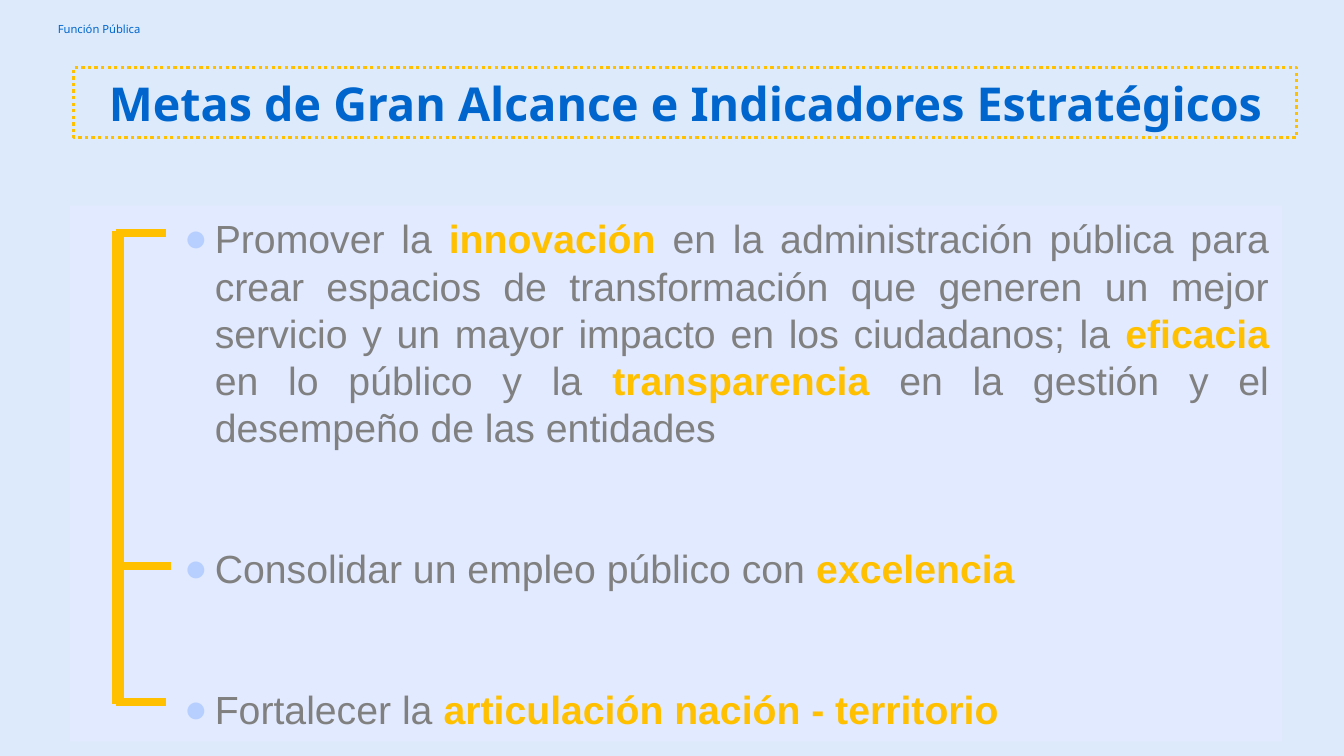
"""Builds the slide on strategic goals and indicators."""
from lxml.etree import SubElement
from pptx import Presentation
from pptx.dml.color import RGBColor
from pptx.enum.dml import MSO_LINE
from pptx.enum.shapes import MSO_CONNECTOR, MSO_SHAPE
from pptx.enum.text import MSO_ANCHOR, MSO_AUTO_SIZE, PP_ALIGN
from pptx.oxml.ns import qn
from pptx.util import Pt

BACKGROUND = RGBColor(0xDC, 0xEA, 0xFB)
PANEL = RGBColor(0xE2, 0xEA, 0xFF)
BLUE = RGBColor(0x00, 0x66, 0xCD)
GOLD = RGBColor(0xFF, 0xC0, 0x00)
GREY = RGBColor(0x80, 0x80, 0x80)
BULLET = RGBColor(0xB7, 0xCF, 0xFF)

GOALS = [
    [("Promover la ", False), ("innovación ", True),
     ("en la administración pública para crear espacios de transformación que "
      "generen un mejor servicio y un mayor impacto en los ciudadanos; la ", False),
     ("eficacia ", True), ("en lo público y la ", False), ("transparencia", True),
     (" en la gestión y el desempeño de las entidades", False)],
    [("Consolidar un empleo público con ", False), ("excelencia", True)],
    [("Fortalecer la ", False), ("articulación nación - territorio", True)],
]


def add_text(paragraph, text, *, size, font, color, bold=False):
    run = paragraph.add_run()
    run.text = text
    run.font.size = Pt(size)
    run.font.name = font
    run.font.color.rgb = color
    run.font.bold = bold


class SlideBuilder:
    heading_font = "Noto Sans"
    body_font = "Arial"
    body_size = 21
    line_height = 25.2

    def __init__(self, presentation):
        self.slide = presentation.slides.add_slide(presentation.slide_layouts[5])
        fill = self.slide.background.fill
        fill.solid()
        fill.fore_color.rgb = BACKGROUND

    def prepare_frame(self, shape, margins=(7.2, 3.6)):
        frame = shape.text_frame
        frame.word_wrap = True
        frame.auto_size = MSO_AUTO_SIZE.NONE
        frame.vertical_anchor = MSO_ANCHOR.MIDDLE
        frame.margin_left = frame.margin_right = Pt(margins[0])
        frame.margin_top = frame.margin_bottom = Pt(margins[1])
        return frame

    def title(self, text, left, top, width, height):
        shape = self.slide.shapes.title
        shape.left, shape.top = Pt(left), Pt(top)
        shape.width, shape.height = Pt(width), Pt(height)
        shape.line.color.rgb = GOLD
        shape.line.width = Pt(1.75)
        shape.line.dash_style = MSO_LINE.ROUND_DOT
        paragraph = self.prepare_frame(shape).paragraphs[0]
        paragraph.alignment = PP_ALIGN.CENTER
        add_text(paragraph, text, size=25, font=self.heading_font, color=BLUE, bold=True)

    def header(self, text, left, top, width, height):
        shape = self.slide.shapes.add_textbox(Pt(left), Pt(top), Pt(width), Pt(height))
        paragraph = self.prepare_frame(shape, margins=(5, 2.9)).paragraphs[0]
        add_text(paragraph, text, size=6, font=self.heading_font, color=BLUE)

    def bullet_panel(self, items, left, top, width, height):
        shape = self.slide.shapes.add_shape(
            MSO_SHAPE.RECTANGLE, Pt(left), Pt(top), Pt(width), Pt(height))
        shape.shadow.inherit = False
        shape.fill.solid()
        shape.fill.fore_color.rgb = PANEL
        shape.line.fill.background()
        frame = self.prepare_frame(shape)
        for index, item in enumerate(items):
            paragraph = frame.add_paragraph() if index else frame.paragraphs[0]
            paragraph.alignment = PP_ALIGN.JUSTIFY
            paragraph.level = 2
            paragraph.line_spacing = Pt(self.line_height)
            paragraph.space_before = Pt(2 * self.line_height if index else 0)
            self.bullet(paragraph)
            for text, strong in item:
                add_text(paragraph, text, size=self.body_size, font=self.body_font,
                         color=GOLD if strong else GREY, bold=strong)

    def bullet(self, paragraph):
        properties = paragraph._p.get_or_add_pPr()
        properties.set("marL", str(Pt(70.5)))
        properties.set("indent", str(Pt(-16.5)))
        color = SubElement(properties, qn("a:buClr"))
        SubElement(color, qn("a:srgbClr"), val=str(BULLET))
        SubElement(properties, qn("a:buFont"), typeface=self.body_font)
        SubElement(properties, qn("a:buChar"), char="●")

    def line(self, start, end, width):
        connector = self.slide.shapes.add_connector(
            MSO_CONNECTOR.STRAIGHT, *(Pt(value) for value in (*start, *end)))
        connector.line.color.rgb = GOLD
        connector.line.width = Pt(width)
        SubElement(connector._element.spPr, qn("a:effectLst"))


def main():
    presentation = Presentation()
    presentation.slide_width, presentation.slide_height = Pt(720), Pt(405)
    builder = SlideBuilder(presentation)
    builder.header("Función Pública", 26, 8.5, 146, 14.4)
    builder.title("Metas de Gran Alcance e Indicadores Estratégicos", 39.5, 36.2, 655.2, 37.4)
    builder.bullet_panel(GOALS, 37.5, 110, 649.5, 287.3)
    builder.line((63.2, 123.8), (63.2, 377.3), 6)
    for left, top in ((62, 124.8), (64.4, 303.1), (62, 376)):
        builder.line((left, top), (left + 27.2, top), 4.5)
    presentation.save("out.pptx")


if __name__ == "__main__":
    main()
